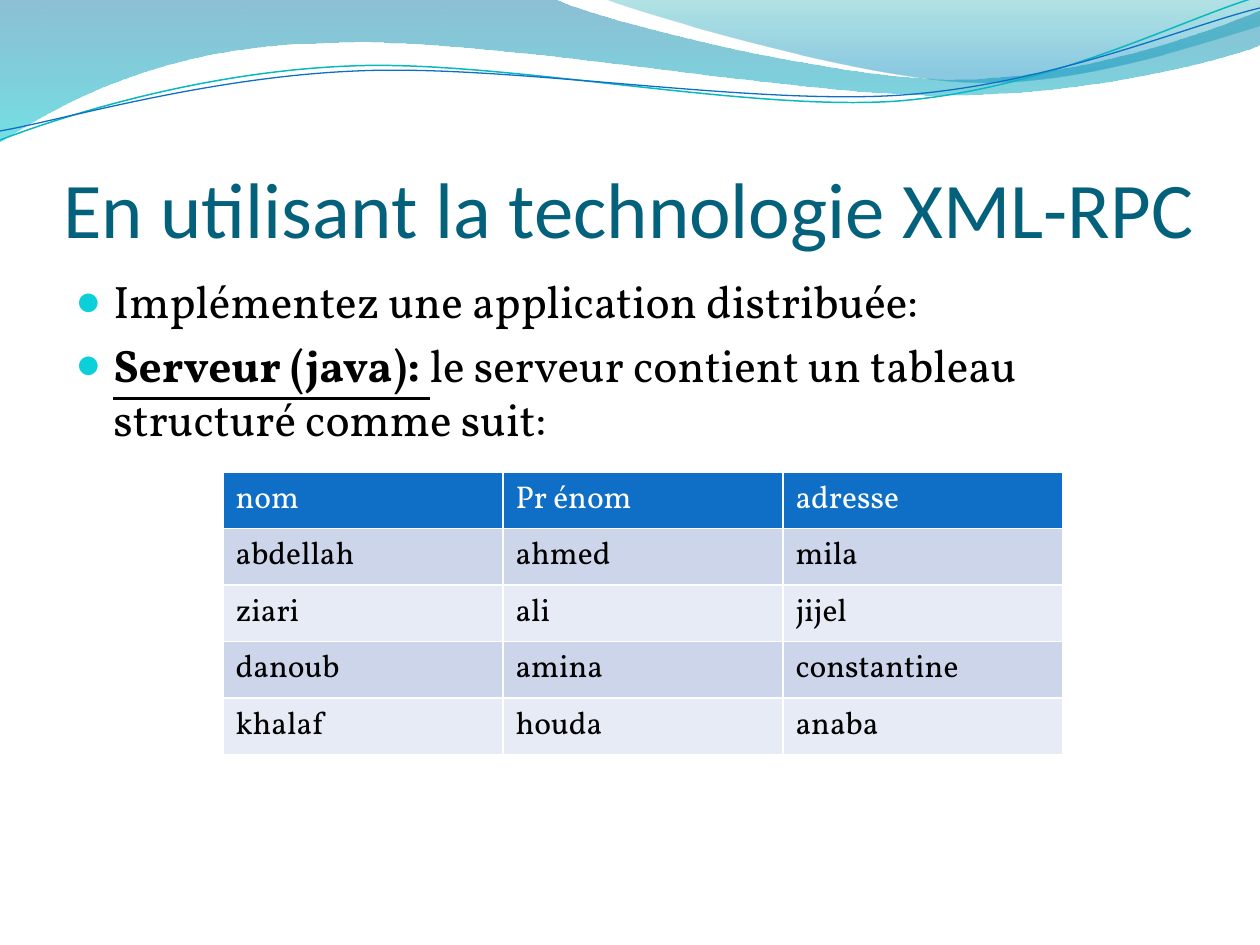
from lxml.etree import SubElement
from pptx import Presentation
from pptx.dml.color import RGBColor
from pptx.enum.text import MSO_ANCHOR, MSO_AUTO_SIZE, PP_ALIGN
from pptx.oxml.ns import qn
from pptx.util import Pt

SCALE = 914400 / 126
COLORS = {
    "title": "04617B", "text": "000000", "bullet": "0BD0D9", "white": "FFFFFF",
    "header": "0F6FC6", "band_dark": "CCD5EA", "band_light": "E7EBF5",
    "wave_teal": "0AB8BF", "wave_blue": "0F6FC6",
    "sea_top": "0074A1", "sea_bottom": "00C6CF",
    "crest_top": "00A1A9", "crest_bottom": "008BBF",
}
BODY_FONT = "Vollkorn"

# Outlines: a pair is a straight step, six numbers are a Bézier step.
SEA = [(0, 0), (554, -1), (600, 21, 837, 79, 955, 79), (1075, 79, 1207, 33, 1260, 11),
       (1261, 45), (1239, 55, 1096, 96, 940, 95), (784, 95, 481, 35, 324, 43),
       (163, 45, 58, 105, -1, 142), (0, 0)]
CREST = [(604, -1), (641, 14, 859, 78, 969, 82), (1079, 87, 1211, 40, 1260, 26),
         (1260, 0), (604, -1)]
TEAL_WAVE = [(0, 140), (60, 117, 199, 72, 349, 66), (498, 59, 747, 112, 898, 101),
             (1050, 89, 1182, 19, 1257, -3)]
BLUE_WAVE = [(0, 131), (59, 121, 207, 77, 357, 71), (508, 64, 752, 106, 903, 95),
             (1053, 84, 1186, 26, 1260, 8)]

ROWS = [
    ("nom", "Pr énom", "adresse"),
    ("abdellah", "ahmed", "mila"),
    ("ziari", "ali", "jijel"),
    ("danoub", "amina", "constantine"),
    ("khalaf", "houda", "anaba"),
]


def px(n):
    return round(n * SCALE)


def rgb(name):
    return RGBColor.from_string(COLORS[name])


def add_outline(slide, outline, close):
    """Build a freeform, then join the three points of each Bézier step into a curve."""
    start, *steps = outline
    builder = slide.shapes.build_freeform(*start, scale=SCALE)
    for step in steps:
        builder.add_line_segments(list(zip(step[::2], step[1::2])), close=False)
    if close:
        builder.add_line_segments([], close=True)
    sp = builder.convert_to_shape()
    sp.shadow.inherit = False
    segments = iter(list(sp._element.spPr.iter(qn("a:lnTo"))))
    for step in steps:
        line = next(segments)
        if len(step) == 6:
            curve = line.makeelement(qn("a:cubicBezTo"))
            line.addprevious(curve)
            for part in (line, next(segments), next(segments)):
                curve.append(part[0])
                part.getparent().remove(part)
    return sp


def add_gradient_area(slide, outline, stops):
    """Fill an outline from top to bottom; stops are (position, colour, opacity %)."""
    sp = add_outline(slide, outline, True)
    sp.line.fill.background()
    sp.fill.gradient()
    sp.fill.gradient_angle = 270
    for stop, (position, color, _) in zip(sp.fill.gradient_stops, stops):
        stop.position = position
        stop.color.rgb = rgb(color)
    for clr, (_, _, opacity) in zip(sp._element.spPr.iter(qn("a:srgbClr")), stops):
        SubElement(clr, qn("a:alpha"), val=str(opacity * 1000))


def add_wave(slide, outline, color, width):
    sp = add_outline(slide, outline, False)
    sp.fill.background()
    sp.line.color.rgb = rgb(color)
    sp.line.width = Pt(width)


def add_run(p, text, size, font, color, bold=False, underline=False):
    r = p.add_run()
    r.text = text
    r.font.size = Pt(size)
    r.font.name = font
    r.font.color.rgb = rgb(color)
    r.font.bold = bold
    r.font.underline = underline


def set_title(slide, text):
    title = slide.shapes.title
    title.left, title.top, title.width, title.height = px(63), px(97), px(1134), px(157)
    tf = title.text_frame
    tf.auto_size = MSO_AUTO_SIZE.NONE
    tf.word_wrap = True
    tf.vertical_anchor = MSO_ANCHOR.BOTTOM
    tf.margin_left = tf.margin_right = tf.margin_bottom = 0
    p = tf.paragraphs[0]
    p.alignment = PP_ALIGN.LEFT
    add_run(p, text, 45, "Calibri", "title")
    slide.shapes._spTree.append(title._element)  # in front of the waves


def add_bullet(p):
    pPr = p._p.get_or_add_pPr()
    pPr.set("marL", str(px(38)))
    pPr.set("indent", str(-px(38)))
    clr = SubElement(pPr, qn("a:buClr"))
    SubElement(clr, qn("a:srgbClr"), val=COLORS["bullet"])
    SubElement(pPr, qn("a:buSzPct"), val="95000")
    SubElement(pPr, qn("a:buFont"), typeface="Arial")
    SubElement(pPr, qn("a:buChar"), char="●")


def add_bullets(slide, items):
    tf = slide.shapes.add_textbox(px(63), px(267), px(1134), px(605)).text_frame
    tf.word_wrap = True
    for i, runs in enumerate(items):
        p = tf.add_paragraph() if i else tf.paragraphs[0]
        add_bullet(p)
        if i:
            p.space_before = Pt(5.2)
        for text, emphasis in runs:
            add_run(p, text, 26, BODY_FONT, "text", emphasis, emphasis)


def set_borders(cell):
    tcPr = cell._tc.get_or_add_tcPr()
    for i, side in enumerate(("a:lnL", "a:lnR", "a:lnT", "a:lnB")):
        ln = tcPr.makeelement(qn(side), {"w": str(Pt(1))})
        fill = SubElement(ln, qn("a:solidFill"))
        SubElement(fill, qn("a:srgbClr"), val=COLORS["white"])
        tcPr.insert(i, ln)


def add_people_table(slide, rows):
    shape = slide.shapes.add_table(len(rows), len(rows[0]), px(223), px(472),
                                   px(840), px(283))
    for r, row in enumerate(rows):
        fill = "header" if r == 0 else "band_dark" if r % 2 else "band_light"
        for c, text in enumerate(row):
            cell = shape.table.cell(r, c)
            cell.fill.solid()
            cell.fill.fore_color.rgb = rgb(fill)
            set_borders(cell)
            add_run(cell.text_frame.paragraphs[0], text, 18, BODY_FONT,
                    "text" if r else "white")


def main():
    prs = Presentation()
    prs.slide_width, prs.slide_height = px(1260), px(945)
    slide = prs.slides.add_slide(prs.slide_layouts[5])
    add_gradient_area(slide, SEA, [(0, "sea_top", 45), (1, "sea_bottom", 55)])
    add_gradient_area(slide, CREST, [(0, "crest_top", 30), (0.8, "crest_bottom", 45)])
    add_wave(slide, TEAL_WAVE, "wave_teal", 0.85)
    add_wave(slide, BLUE_WAVE, "wave_blue", 0.75)
    set_title(slide, "En utilisant la technologie XML-RPC")
    add_bullets(slide, [
        [("Implémentez une application distribuée:", False)],
        [("Serveur (java): ", True),
         ("le serveur contient un tableau structuré comme suit:", False)],
    ])
    add_people_table(slide, ROWS)
    prs.save("out.pptx")


if __name__ == "__main__":
    main()
